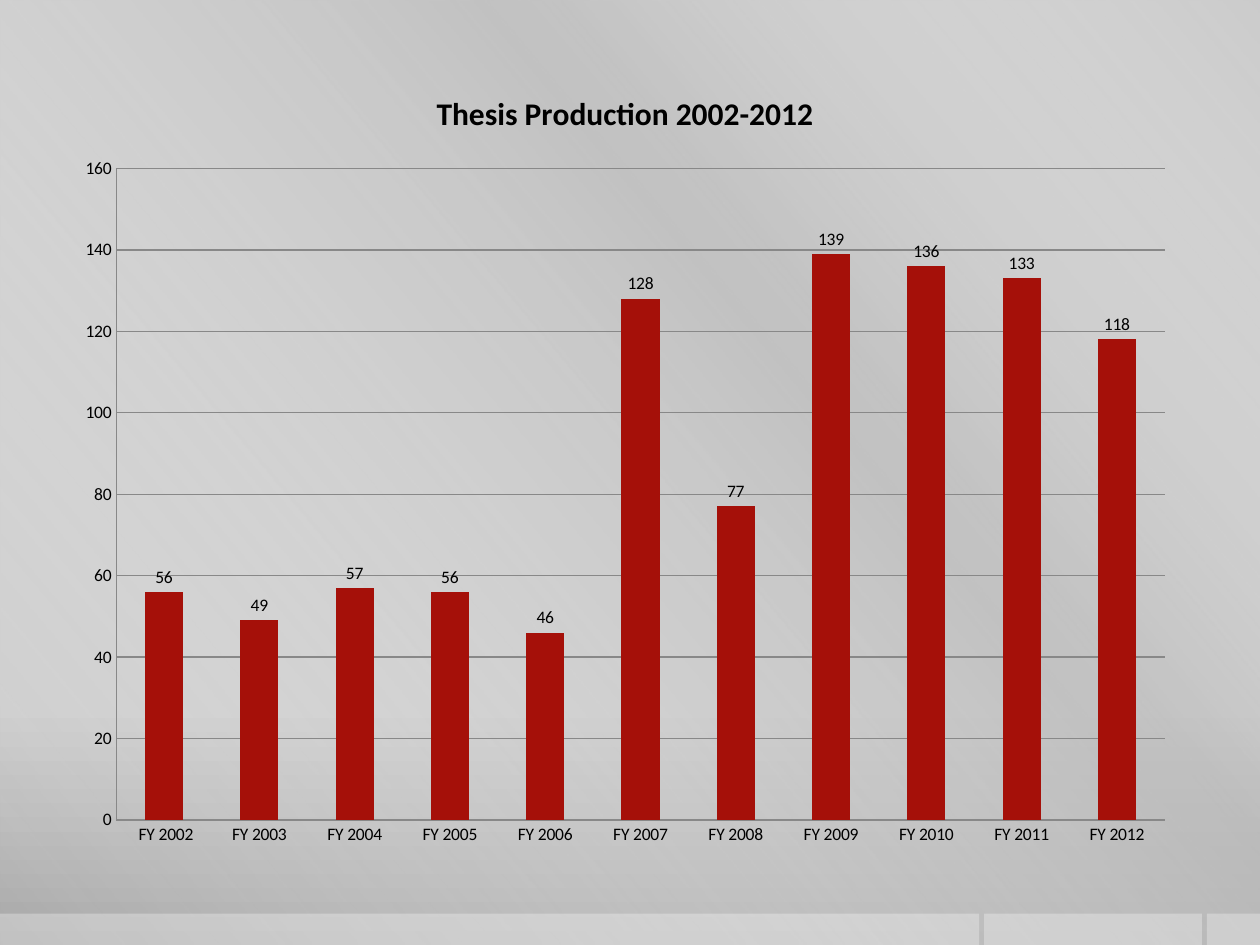
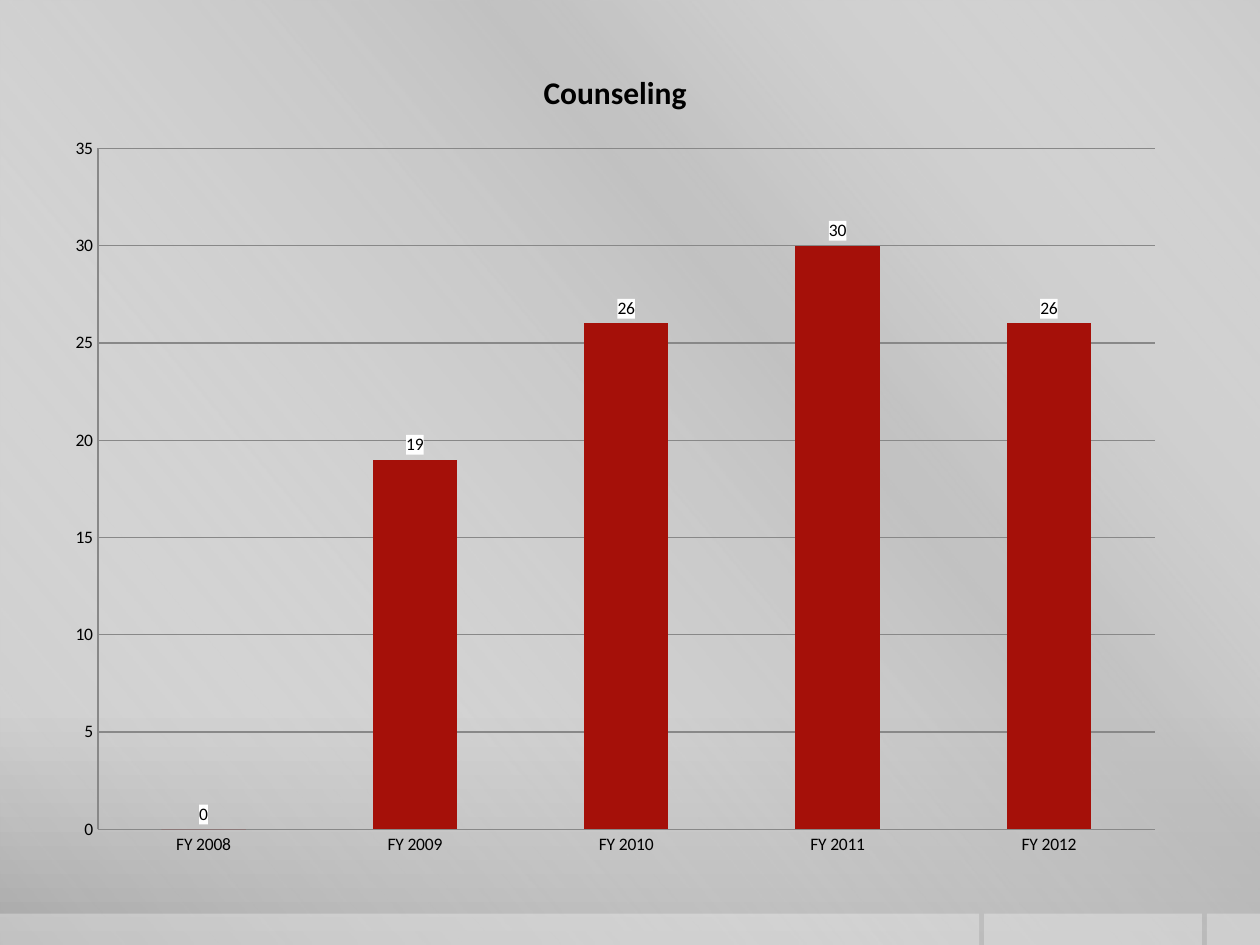
"""Builds two slides of yearly column charts on a shared grey master."""
from lxml import etree
from pptx import Presentation
from pptx import util as u
from pptx.chart.data import CategoryChartData
from pptx.dml.color import RGBColor
from pptx.enum import chart as ch, shapes
from pptx.oxml.ns import qn

FONT = "Calibri"
BLACK, WHITE, RED, GREY = "000000", "FFFFFF", "A51009", "888888"
SLIDE_WIDTH, SLIDE_HEIGHT = 25.4, 19.05
STRIP_TOP, STRIP_GAP = 18.42, 0.1


def rgb(value):
    return RGBColor.from_string(value)


def set_gradient(fill, parent, angle, stops):
    fill.solid()
    gradient = etree.Element(qn("a:gradFill"), rotWithShape="1")
    stop_list = etree.SubElement(gradient, qn("a:gsLst"))
    for position, value, opacity in stops:
        stop = etree.SubElement(stop_list, qn("a:gs"), pos=str(position * 1000))
        tint = etree.SubElement(stop, qn("a:srgbClr"), val=value)
        etree.SubElement(tint, qn("a:alpha"), val=str(opacity * 1000))
    etree.SubElement(gradient, qn("a:lin"), ang=str(angle * 60000), scaled="0")
    parent.replace(parent.find(qn("a:solidFill")), gradient)


prs = Presentation()
prs.slide_width, prs.slide_height = u.Cm(SLIDE_WIDTH), u.Cm(SLIDE_HEIGHT)
master = prs.slide_master
blank = prs.slide_layouts[6]

backdrop = master.background.fill
backdrop.solid()
set_gradient(backdrop, master.element.find(".//" + qn("p:bgPr")), 90,
             [(0, "CBCBCB", 100), (76, "C8C8C8", 100), (100, "A7A7A7", 100)])

thesis_slide, counseling_slide = [prs.slides.add_slide(blank) for _ in range(2)]

strip_edges = [0, 19.84, 24.33, SLIDE_WIDTH + STRIP_GAP]
bands = [(0, 0, SLIDE_WIDTH, SLIDE_HEIGHT)]
for left, following in zip(strip_edges, strip_edges[1:]):
    bands.append((left, STRIP_TOP, following - left - STRIP_GAP, SLIDE_HEIGHT - STRIP_TOP))

for index, place in enumerate(bands):
    band = thesis_slide.shapes.add_shape(shapes.MSO_SHAPE.RECTANGLE, *map(u.Cm, place))
    band.shadow.inherit = False
    band.line.fill.background()
    if index == 0:
        set_gradient(band.fill, band.element.spPr, 140,
                     [(0, WHITE, 0), (34, "BFBFBF", 61), (38, "BFBFBF", 76), (100, WHITE, 0)])
    else:
        band.fill.solid()
        band.fill.fore_color.rgb = rgb(WHITE)
        tint = band.element.spPr.find(".//" + qn("a:srgbClr"))
        etree.SubElement(tint, qn("a:alpha"), val="30000")
    master.shapes.element.append(band.element) if hasattr(master.shapes, "element") \
        else master.shapes._spTree.append(band.element)

reports = [
    (thesis_slide, "Thesis Production 2002-2012", (1.27, 1.27, 22.66, 16.08),
     [" FY 2002"] + [f"FY {year}" for year in range(2003, 2013)],
     [56, 49, 57, 56, 46, 128, 77, 139, 136, 133, 118], 160, 20, None),
    (counseling_slide, "Counseling", (1.07, 0.84, 22.66, 16.71),
     [f"FY {year}" for year in range(2008, 2013)],
     [0, 19, 26, 30, 26], 35, 5, WHITE),
]

for slide, heading, place, years, counts, top_value, step, label_fill in reports:
    data = CategoryChartData()
    data.categories = years
    data.add_series("Series 1", counts)
    chart = slide.shapes.add_chart(
        ch.XL_CHART_TYPE.COLUMN_CLUSTERED, *map(u.Cm, place), data).chart
    chart.font.name, chart.font.size = FONT, u.Pt(10)
    chart.font.color.rgb = rgb(BLACK)
    chart.has_legend = False

    chart.has_title = True
    chart.chart_title.include_in_layout = False
    title = chart.chart_title.text_frame.paragraphs[0]
    title.text = heading
    title.font.name, title.font.size, title.font.bold = FONT, u.Pt(18), True
    title.font.color.rgb = rgb(BLACK)

    value_axis = chart.value_axis
    value_axis.minimum_scale, value_axis.maximum_scale = 0, top_value
    value_axis.major_unit = step
    value_axis.has_major_gridlines = True
    for axis in (chart.category_axis, value_axis):
        axis.major_tick_mark = ch.XL_TICK_MARK.NONE
    for rule in (chart.category_axis.format.line, value_axis.format.line,
                 value_axis.major_gridlines.format.line):
        rule.color.rgb, rule.width = rgb(GREY), u.Pt(0.75)

    plot = chart.plots[0]
    plot.gap_width, plot.vary_by_categories = 150, False
    columns = plot.series[0]
    columns.format.fill.solid()
    columns.format.fill.fore_color.rgb = rgb(RED)
    labels = columns.data_labels
    labels.show_value = True
    labels.position = ch.XL_LABEL_POSITION.OUTSIDE_END
    labels.font.name, labels.font.size = FONT, u.Pt(10)
    labels.font.color.rgb = rgb(BLACK)
    if label_fill:
        label_box = etree.Element(qn("c:spPr"))
        solid = etree.SubElement(label_box, qn("a:solidFill"))
        etree.SubElement(solid, qn("a:srgbClr"), val=label_fill)
        columns._element.find(".//" + qn("c:txPr")).addprevious(label_box)

prs.save("out.pptx")
